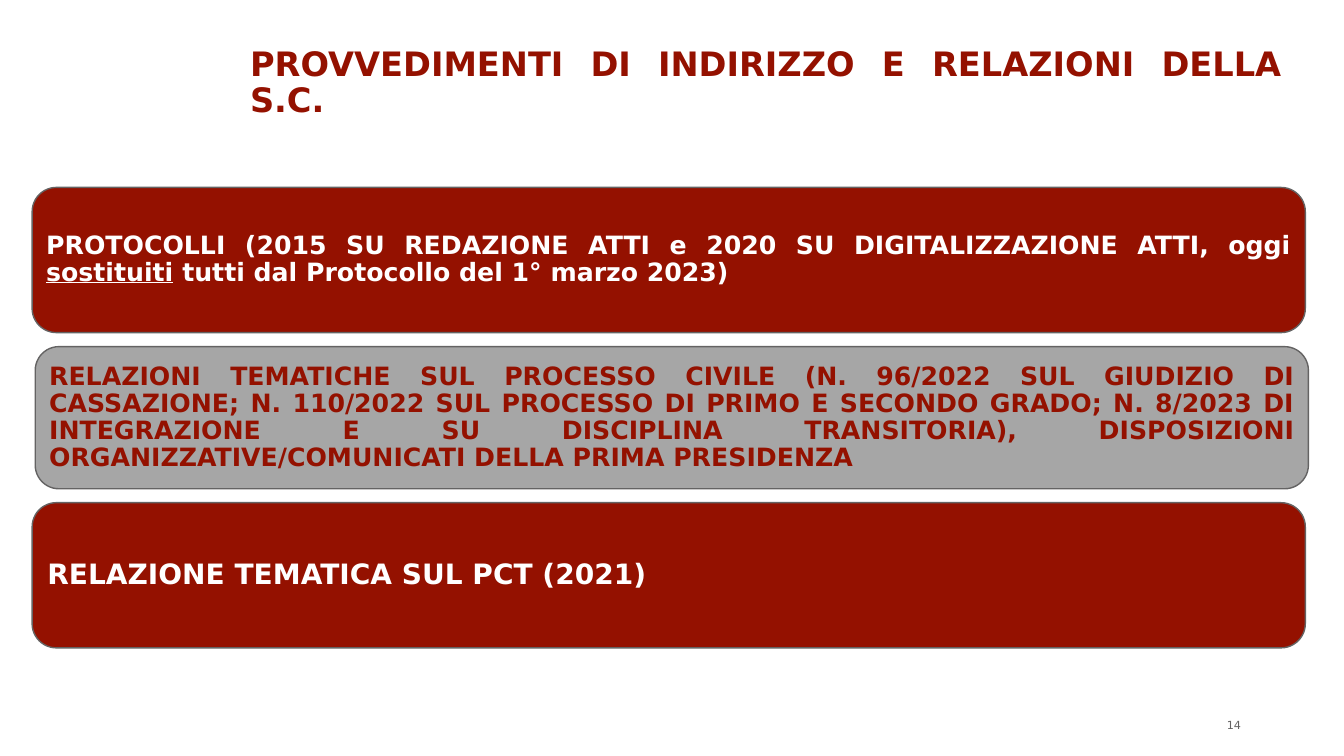
from pptx import Presentation
from pptx.dml.color import RGBColor
from pptx.enum import shapes, text
from pptx.util import Pt

FONT = "DejaVu Sans"
RED = RGBColor(0x94, 0x11, 0x00)
GRAY = RGBColor(0xA6, 0xA6, 0xA6)
DARK = RGBColor(0x64, 0x63, 0x63)
WHITE = RGBColor(0xFF, 0xFF, 0xFF)

JUSTIFY = text.PP_ALIGN.JUSTIFY
LEFT = text.PP_ALIGN.LEFT

PROTOCOLS = [
    ("PROTOCOLLI (2015 SU REDAZIONE ATTI e 2020 SU DIGITALIZZAZIONE ATTI, oggi ", False),
    ("sostituiti", True),
    (" tutti dal Protocollo del 1° marzo 2023)", False),
]
REPORTS = [
    ("RELAZIONI TEMATICHE SUL PROCESSO CIVILE (N. 96/2022 SUL GIUDIZIO DI CASSAZIONE; "
     "N. 110/2022 SUL PROCESSO DI PRIMO E SECONDO GRADO; N. 8/2023 DI INTEGRAZIONE E SU "
     "DISCIPLINA TRANSITORIA), DISPOSIZIONI ORGANIZZATIVE/COMUNICATI DELLA PRIMA PRESIDENZA",
     False),
]
PCT_REPORT = [("RELAZIONE TEMATICA SUL PCT (2021)", False)]


def write(paragraph, spans, size, color, align, bold=True):
    """Fill a paragraph with (wording, underlined) spans in one style."""
    for wording, underlined in spans:
        span = paragraph.add_run()
        span.text = wording
        if underlined:
            span.font.underline = True
    paragraph.alignment = align
    paragraph.line_spacing = 0.9
    font = paragraph.font
    font.name, font.size, font.bold = FONT, Pt(size), bold
    font.color.rgb = color


def add_title(page, left, top, width, height):
    """Place the heading in the title placeholder."""
    title = page.shapes.title
    title.left, title.top, title.width, title.height = map(Pt, (left, top, width, height))
    frame = title.text_frame
    frame.word_wrap = True
    frame.auto_size = text.MSO_AUTO_SIZE.NONE
    frame.vertical_anchor = text.MSO_ANCHOR.TOP
    heading = [("PROVVEDIMENTI DI INDIRIZZO E RELAZIONI DELLA S.C.", False)]
    write(frame.paragraphs[0], heading, 24, RED, JUSTIFY)


def add_panel(page, left, top, width, height, fill, spans, size, color, align, inset):
    """Draw one rounded panel with its text."""
    panel = page.shapes.add_shape(
        shapes.MSO_SHAPE.ROUNDED_RECTANGLE, *map(Pt, (left, top, width, height)))
    panel.shadow.inherit = False
    panel.fill.solid()
    panel.fill.fore_color.rgb = fill
    panel.line.color.rgb = DARK
    panel.line.width = Pt(1)
    frame = panel.text_frame
    frame.word_wrap = True
    frame.vertical_anchor = text.MSO_ANCHOR.MIDDLE
    frame.margin_left = frame.margin_right = Pt(inset)
    frame.margin_top = frame.margin_bottom = Pt(3)
    write(frame.paragraphs[0], spans, size, color, align)


def add_panels(page, left, top, width):
    """Stack the three panels, the middle one slightly indented."""
    gap = 10
    rows = [
        (0, 103.7, RED, PROTOCOLS, 18, WHITE, JUSTIFY, 5),
        (2.2, 101.5, GRAY, REPORTS, 18, RED, JUSTIFY, 5),
        (0, 103.7, RED, PCT_REPORT, 20, WHITE, LEFT, 5.8),
    ]
    for indent, height, *style in rows:
        add_panel(page, left + indent, top, width, height, *style)
        top += height + gap


def add_page_number(page, left, top, width, height):
    """Write the page number at the lower right."""
    box = page.shapes.add_textbox(*map(Pt, (left, top, width, height)))
    frame = box.text_frame
    frame.word_wrap = True
    frame.vertical_anchor = text.MSO_ANCHOR.MIDDLE
    write(frame.paragraphs[0], [("14", False)], 8, DARK, text.PP_ALIGN.RIGHT, bold=False)


def main():
    """Build the deck and save it."""
    deck = Presentation()
    deck.slide_width, deck.slide_height = Pt(960), Pt(540)
    page = deck.slides.add_slide(deck.slide_layouts[5])
    add_title(page, 171.4, 30.2, 751, 86.4)
    add_panels(page, 23, 133.9, 909.4)
    add_page_number(page, 862.6, 504, 31, 28.8)
    deck.save("out.pptx")


if __name__ == "__main__":
    main()
